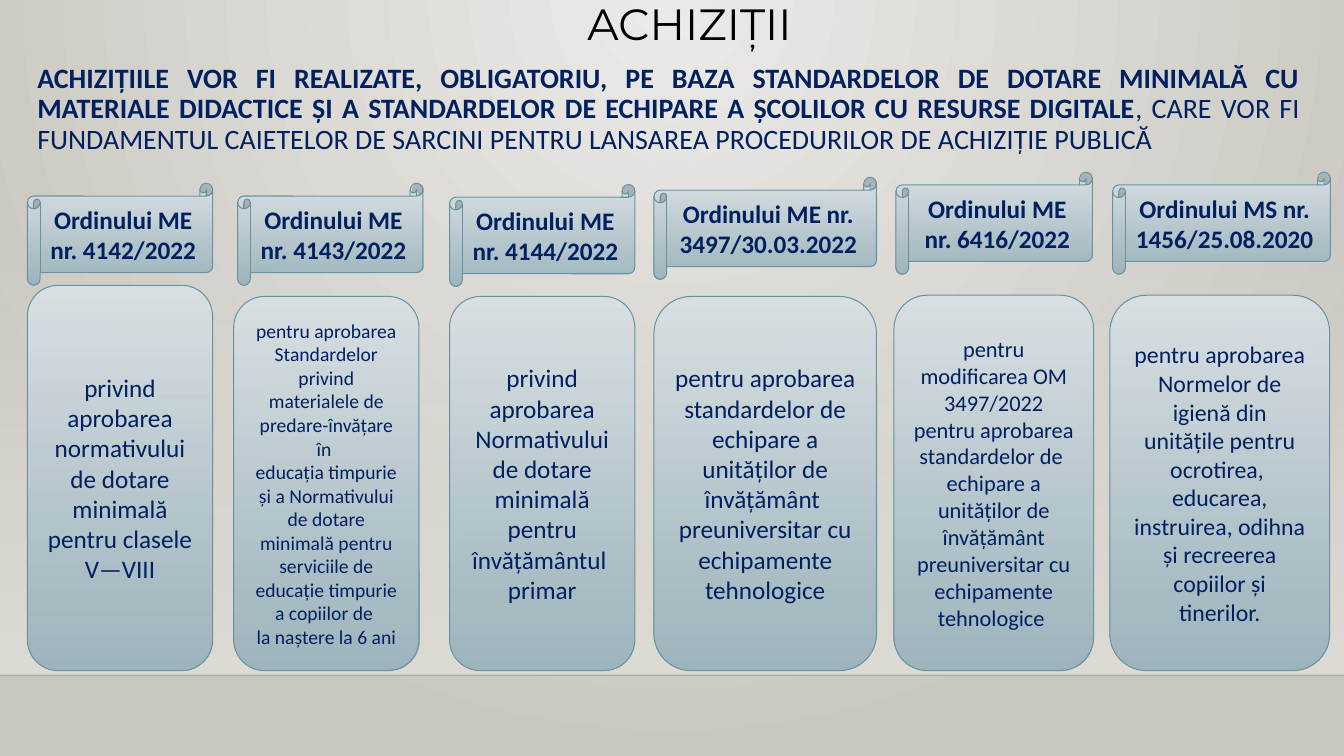
from lxml import etree
from pptx import Presentation, util as u
from pptx.dml.color import RGBColor
from pptx.enum import shapes, text
from pptx.oxml.ns import qn

# Content
HEADING = "ACHIZIȚII"
INTRO = [
    ("ACHIZIȚIILE VOR FI REALIZATE, OBLIGATORIU, PE BAZA STANDARDELOR DE DOTARE "
     "MINIMALĂ CU MATERIALE DIDACTICE ȘI A STANDARDELOR DE ECHIPARE A ȘCOLILOR "
     "CU RESURSE DIGITALE", True),
    (", CARE VOR FI FUNDAMENTUL CAIETELOR DE SARCINI PENTRU LANSAREA "
     "PROCEDURILOR DE ACHIZIȚIE PUBLICĂ", False),
]
# Order title, (scroll left, top, width), card text, text size, (card left, top, width); cm
ORDERS = [
    ("Ordinului ME nr. 4142/2022", (0.69, 4.62, 4.67),
     ["privind aprobarea normativului de dotare minimală pentru clasele V—VIII"],
     18, (0.69, 7.19, 4.67)),
    ("Ordinului ME nr. 4143/2022", (5.99, 4.62, 4.67),
     ["pentru aprobarea Standardelor privind materialele de predare-învățare în ",
      "educația timpurie și a Normativului de dotare minimală pentru serviciile "
      "de educație timpurie a copiilor de ",
      "la naștere la 6 ani"],
     14, (5.89, 7.47, 4.67)),
    ("Ordinului ME nr. 4144/2022", (11.33, 4.65, 4.67),
     ["privind aprobarea Normativului de dotare minimală pentru învățământul ",
      "primar"],
     18, (11.33, 7.47, 4.67)),
    ("Ordinului ME nr. 3497/30.03.2022", (16.48, 4.47, 5.61),
     ["pentru aprobarea standardelor de echipare a unităților de învățământ ",
      "preuniversitar cu echipamente tehnologice"],
     18, (16.48, 7.47, 5.61)),
    ("Ordinului ME nr. 6416/2022", (22.58, 4.34, 4.95),
     ["pentru modificarea OM 3497/2022 pentru aprobarea standardelor de ",
      "echipare a unităților de învățământ preuniversitar cu echipamente "
      "tehnologice "],
     16, (22.53, 7.44, 5.03)),
    ("Ordinului MS nr. 1456/25.08.2020", (28.04, 4.34, 5.49),
     ["pentru aprobarea Normelor de igienă din unitățile pentru ocrotirea, ",
      "educarea, instruirea, odihna și recreerea copiilor și tinerilor."],
     17, (27.97, 7.44, 5.54)),
]

# Sizes and colours
PAGE_WIDTH, PAGE_HEIGHT = 33.87, 19.05
SCROLL_HEIGHT, CARD_BOTTOM = 2.57, 16.9
WALL_TOP, FLOOR = 5.61, 17.02
NAVY = RGBColor(0x00, 0x20, 0x60)
BLACK = RGBColor(0x00, 0x00, 0x00)
OUTLINE = RGBColor(0x68, 0x92, 0xA0)
CARD_LIGHT = RGBColor(0xD9, 0xE1, 0xE4)
CARD_DARK = RGBColor(0x9A, 0xB2, 0xBC)
WALL = RGBColor(0xDF, 0xDB, 0xD5)
PAGE_LIGHT = RGBColor(0xEC, 0xEA, 0xE7)
PAGE_DARK = RGBColor(0xCA, 0xC7, 0xC1)


def set_alpha(parent, percents):
    for color, percent in zip(parent.iter(qn("a:srgbClr")), percents):
        if percent < 100:
            etree.SubElement(color, qn("a:alpha")).set("val", str(percent * 1000))


def set_gradient(fill, start, end):
    fill.gradient()
    fill.gradient_angle = 270
    for stop, color in zip(fill.gradient_stops, (start, end)):
        stop.color.rgb = color


def add_panel(kind, left, top, width, height, colors, alphas):
    panel = page.shapes.add_shape(kind, u.Cm(left), u.Cm(top), u.Cm(width), u.Cm(height))
    panel.shadow.inherit = False
    set_gradient(panel.fill, *colors)
    set_alpha(panel.fill._xPr, alphas)
    panel.line.fill.background()
    return panel


def add_span(para, words, size, color=NAVY, bold=False, font="Calibri"):
    span = para.add_run()
    span.text = words
    span.font.size, span.font.name = u.Pt(size), font
    span.font.bold, span.font.color.rgb = bold, color


def add_label(kind, left, top, width, height, lines, size, bold):
    label = add_panel(kind, left, top, width, height, (CARD_LIGHT, CARD_DARK), (100, 92))
    label.line.color.rgb, label.line.width = OUTLINE, u.Pt(0.75)
    frame = label.text_frame
    frame.word_wrap = True
    frame.vertical_anchor = text.MSO_ANCHOR.MIDDLE
    for number, line in enumerate(lines):
        para = frame.add_paragraph() if number else frame.paragraphs[0]
        para.alignment = text.PP_ALIGN.CENTER
        add_span(para, line, size, bold=bold)


def add_text(left, top, width, height, anchor, align, spacing):
    box = page.shapes.add_textbox(u.Cm(left), u.Cm(top), u.Cm(width), u.Cm(height))
    box.text_frame.word_wrap = True
    box.text_frame.vertical_anchor = anchor
    para = box.text_frame.paragraphs[0]
    para.alignment, para.line_spacing = align, spacing
    return para


deck = Presentation()
deck.slide_width, deck.slide_height = u.Cm(PAGE_WIDTH), u.Cm(PAGE_HEIGHT)
page = deck.slides.add_slide(deck.slide_layouts[6])

# Background: light glow from the top centre
set_gradient(page.background.fill, PAGE_LIGHT, PAGE_DARK)
linear = next(page.background._cSld.iter(qn("a:lin")))
glow = etree.Element(qn("a:path"), {"path": "circle"})
etree.SubElement(glow, qn("a:fillToRect"),
                 {"l": "43000", "t": "0", "r": "43000", "b": "100000"})
linear.getparent().replace(linear, glow)

# Wall and floor line
add_panel(shapes.MSO_SHAPE.RECTANGLE, 0, WALL_TOP, PAGE_WIDTH, FLOOR - WALL_TOP,
          (WALL, WALL), (0, 100))
floor_line = page.shapes.add_connector(
    shapes.MSO_CONNECTOR.STRAIGHT, 0, u.Cm(FLOOR), u.Cm(PAGE_WIDTH), u.Cm(FLOOR))
floor_line.line.color.rgb, floor_line.line.width = BLACK, u.Pt(1)
line_properties = floor_line._element.spPr
set_alpha(line_properties, (20,))
etree.SubElement(line_properties, qn("a:effectLst"))

# Introduction
intro = add_text(0.69, 1.5, 32.31, 2.57, text.MSO_ANCHOR.TOP, text.PP_ALIGN.JUSTIFY, 0.9)
for words, bold in INTRO:
    add_span(intro, words, 20, bold=bold)

# Cards, then the scrolls above them
for _, _, lines, size, (left, top, width) in ORDERS:
    add_label(shapes.MSO_SHAPE.ROUNDED_RECTANGLE, left, top, width, CARD_BOTTOM - top,
              lines, size, False)
for order, (left, top, width), *_ in ORDERS:
    add_label(shapes.MSO_SHAPE.HORIZONTAL_SCROLL, left, top, width, SCROLL_HEIGHT,
              [order], 18, True)

# Heading
heading = add_text(4.04, 0, 26.67, 1.4, text.MSO_ANCHOR.MIDDLE, text.PP_ALIGN.CENTER, 0.8)
add_span(heading, HEADING, 31.2, BLACK, font="Montserrat")

deck.save("out.pptx")
